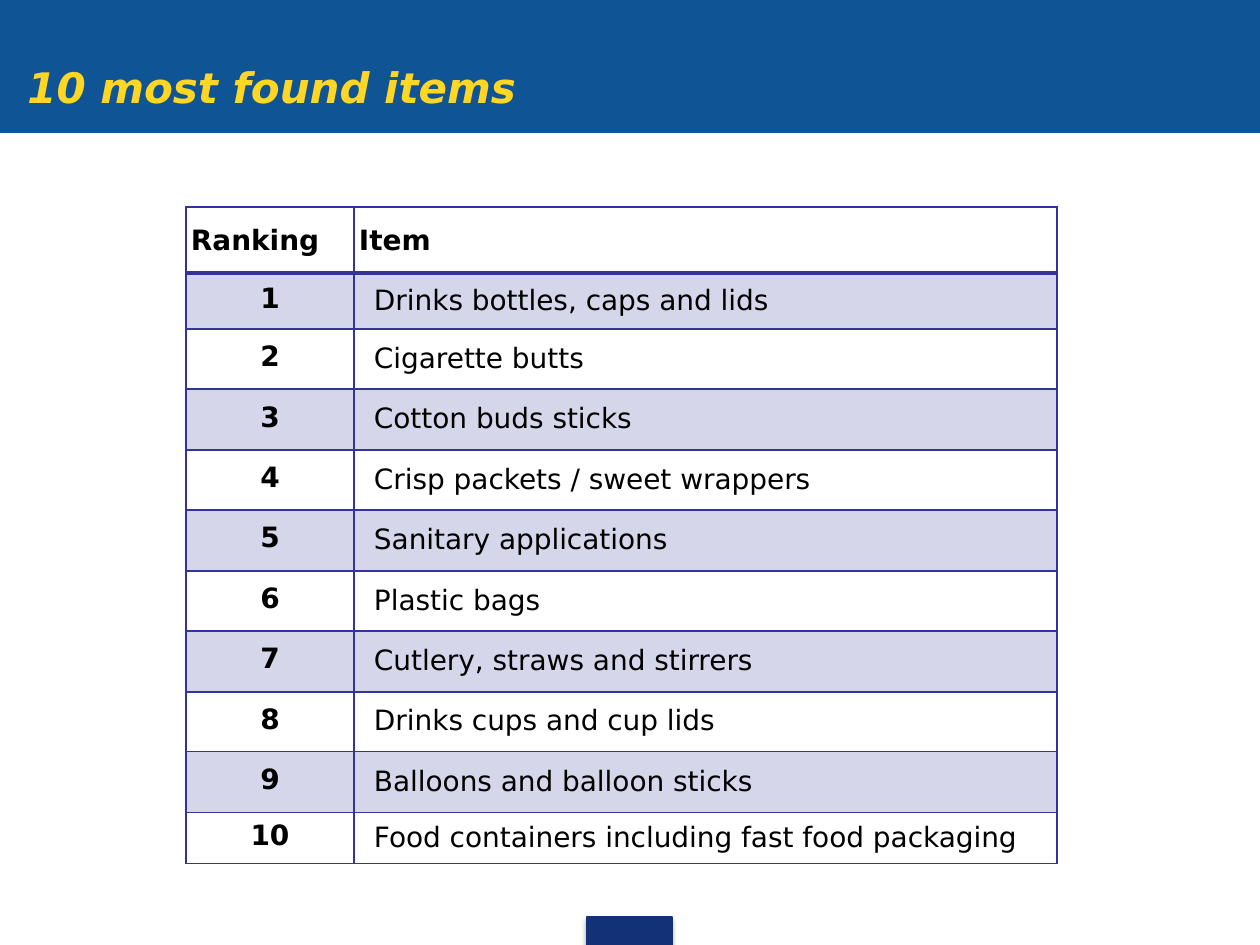
from lxml.etree import SubElement
from pptx import Presentation
from pptx.dml.color import RGBColor
from pptx.enum.shapes import MSO_SHAPE
from pptx.enum.text import MSO_ANCHOR, PP_ALIGN
from pptx.oxml import parse_xml
from pptx.oxml.ns import nsdecls, qn
from pptx.util import Pt

TITLE = "10 most found items"
HEAD = ("Ranking", "Item")
ITEMS = [
    "Drinks bottles, caps and lids",
    "Cigarette butts",
    "Cotton buds sticks",
    "Crisp packets / sweet wrappers",
    "Sanitary applications",
    "Plastic bags",
    "Cutlery, straws and stirrers",
    "Drinks cups and cup lids",
    "Balloons and balloon sticks",
    "Food containers including fast food packaging",
]
COLS = [168, 703]
ROWS = [66, 56] + [60, 61] * 4 + [51]
BARS = [("0F5494", (0, 0, 1260, 132)), ("133176", (587, 917, 85, 28))]
FONT = "DejaVu Sans"
EDGE = "333399"
BAND = "D6D6EB"


def px(n):
    return round(n * 914400 / 126)


def rgb(code):
    return RGBColor.from_string(code)


def put(thing, form):
    for key, val in form.items():
        setattr(thing, key, val)


def write(para, text, color, **form):
    run = para.add_run()
    run.text = text
    put(run.font, {"name": FONT, **form})
    run.font.color.rgb = rgb(color)


def bar(color, box):
    shape = slide.shapes.add_shape(MSO_SHAPE.RECTANGLE, *map(px, box))
    shape.shadow.inherit = False
    shape.fill.solid()
    shape.fill.fore_color.rgb = rgb(color)
    shape.line.color.rgb = rgb(color)
    shape.line.width = Pt(0.75)
    return shape


def shade(shape):
    glow = shape._element.spPr.find(qn("a:effectLst"))
    glow.append(parse_xml(
        f'<a:outerShdw {nsdecls("a")} blurRad="{Pt(3.1)}" dist="{Pt(1.8)}" '
        'dir="5400000" rotWithShape="0"><a:srgbClr val="000000">'
        '<a:alpha val="35000"/></a:srgbClr></a:outerShdw>'))


def border(cell, widths):
    props = cell._tc.get_or_add_tcPr()
    for spot, (side, width) in enumerate(zip("LRTB", widths)):
        line = parse_xml(f'<a:ln{side} {nsdecls("a")} w="{Pt(width)}"/>')
        fill = SubElement(line, qn("a:solidFill"))
        SubElement(fill, qn("a:srgbClr"), val=EDGE)
        props.insert(spot, line)


def fill_cell(row, col, text):
    cell = table.cell(row, col)
    left = 5 if row == 0 else (0, 20)[col]
    put(cell, {
        "margin_left": px(left), "margin_right": 0,
        "margin_top": px(5), "margin_bottom": px(3),
        "vertical_anchor": MSO_ANCHOR.MIDDLE,
    })
    para = cell.text_frame.paragraphs[0]
    if row:
        put(para, {
            "alignment": (PP_ALIGN.CENTER, PP_ALIGN.LEFT)[col],
            "line_spacing": Pt((15, 16.8)[col]),
        })
    write(para, text, "000000", size=Pt(16), bold=row == 0 or col == 0)
    if row % 2:
        cell.fill.solid()
        cell.fill.fore_color.rgb = rgb(BAND)
    else:
        cell.fill.background()
    border(cell, (1, 1, 2 if row == 1 else 1, 2 if row == 0 else 1))


deck = Presentation()
put(deck, {"slide_width": px(1260), "slide_height": px(945)})
slide = deck.slides.add_slide(deck.slide_layouts[6])

top, foot = [bar(*item) for item in BARS]
shade(foot)

title = slide.shapes.add_textbox(*map(px, (15, 55, 863, 63))).text_frame
title.word_wrap = True
write(title.paragraphs[0], TITLE, "FFD624", size=Pt(24), bold=True, italic=True)

box = (186, 207, sum(COLS), sum(ROWS))
table = slide.shapes.add_table(len(ROWS), len(COLS), *map(px, box)).table
put(table, {"first_row": False, "horz_banding": False})
for col, width in zip(table.columns, COLS):
    col.width = px(width)
for row, height in zip(table.rows, ROWS):
    row.height = px(height)
lines = [HEAD] + [(str(n), item) for n, item in enumerate(ITEMS, 1)]
for r, line in enumerate(lines):
    for c, text in enumerate(line):
        fill_cell(r, c, text)

deck.save("out.pptx")
